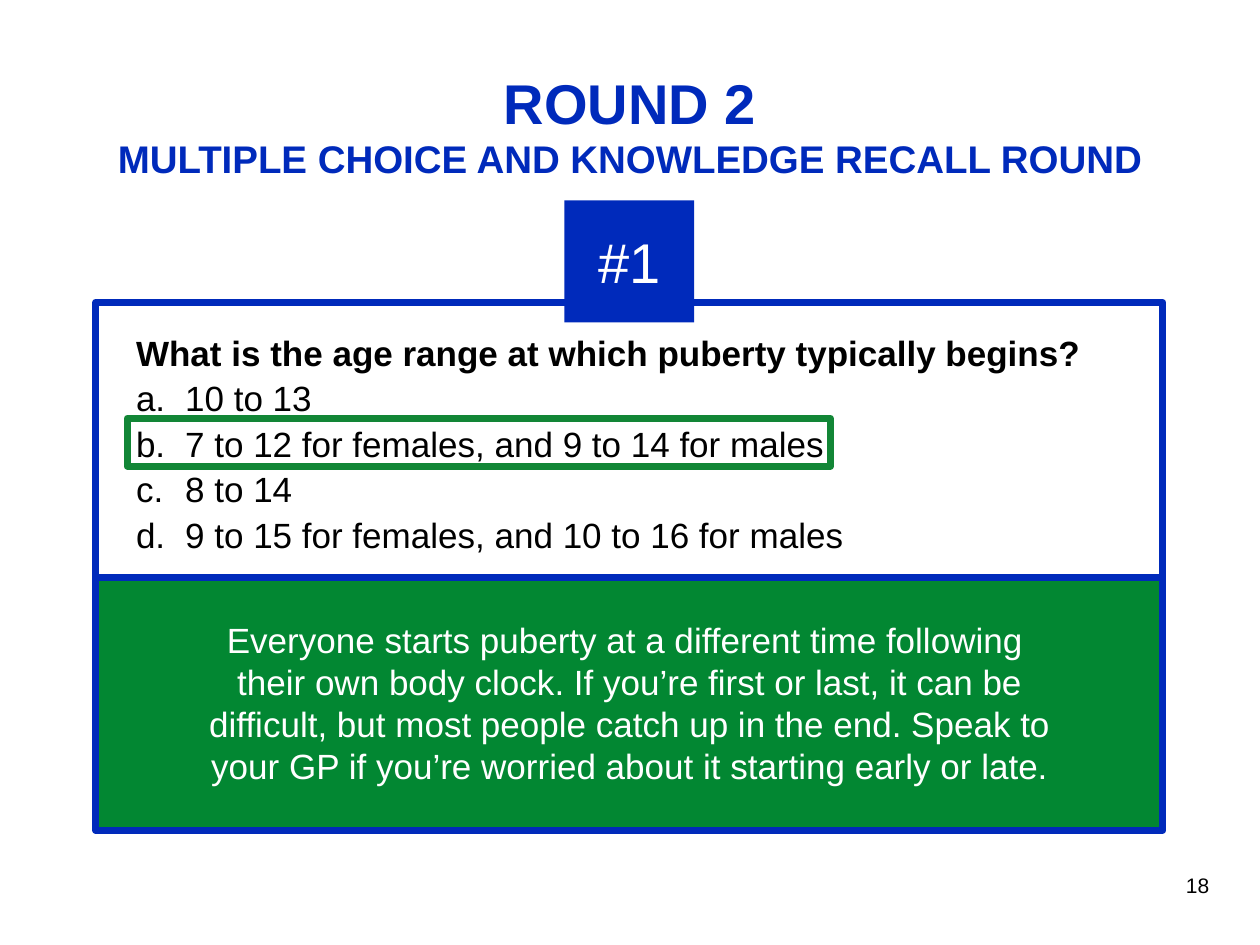
from lxml import etree
from pptx import Presentation
from pptx.dml.color import RGBColor
from pptx.enum import shapes, text
from pptx.oxml import ns
from pptx.util import Inches, Pt

BLUE, GREEN, FRAME = "002ABB", "028732", "128636"
WHITE, BLACK = "FFFFFF", "000000"

TITLE = "ROUND 2\vMULTIPLE CHOICE AND KNOWLEDGE RECALL ROUND"
TITLE_SIZES = [32, 22]
BADGE = "#1"
QUESTION = "What is the age range at which puberty typically begins?"
OPTIONS = [
    "10 to 13",
    "7 to 12 for females, and 9 to 14 for males",
    "8 to 14",
    "9 to 15 for females, and 10 to 16 for males",
]
ANSWER = (
    "Everyone starts puberty at a different time following \v"
    "their own body clock. If you’re first or last, it can be difficult, "
    "but most people catch up in the end. Speak to your GP if you’re "
    "worried about it starting early or late."
)
PAGE = "18"

LEFT, WIDTH = 0.76, 8.47
TOP, SPLIT, BOTTOM = 2.4, 4.58, 6.59


def color(code):
    return RGBColor.from_string(code)


def style(run, size, code, bold=False):
    font = run.font
    font.name, font.size, font.bold = "Arial", Pt(size), bold
    font.color.rgb = color(code)


def set_frame(frame, anchor):
    frame.word_wrap = True
    frame.auto_size = text.MSO_AUTO_SIZE.NONE
    frame.vertical_anchor = anchor
    frame.margin_left = frame.margin_right = Inches(0.05)
    frame.margin_top = frame.margin_bottom = Inches(0.05)


def write(frame, words, size, code, anchor=text.MSO_ANCHOR.MIDDLE):
    """Fill a frame with one centred paragraph."""
    set_frame(frame, anchor)
    frame.text = words
    para = frame.paragraphs[0]
    para.alignment = text.PP_ALIGN.CENTER
    for run in para.runs:
        style(run, size, code)


def add_rect(slide, box, fill=None, line=None):
    rect = slide.shapes.add_shape(
        shapes.MSO_SHAPE.RECTANGLE, *map(Inches, box))
    rect.shadow.inherit = False
    if fill:
        rect.fill.solid()
        rect.fill.fore_color.rgb = color(fill)
    else:
        rect.fill.background()
    if line:
        rect.line.color.rgb = color(line)
        rect.line.width = Pt(4)
    else:
        rect.line.fill.background()
    return rect


def add_text(slide, box):
    return slide.shapes.add_textbox(*map(Inches, box)).text_frame


def add_letter(para):
    """Number a paragraph a., b., c. with a hanging indent."""
    props = para._p.get_or_add_pPr()
    props.set("marL", str(Inches(0.39)))
    props.set("indent", str(-Inches(0.39)))
    etree.SubElement(props, ns.qn("a:buAutoNum"), type="alphaLcPeriod")


def add_title(slide):
    title = slide.shapes.title
    title.left, title.top = Inches(0.5), Inches(0.37)
    title.width, title.height = Inches(9), Inches(1.24)
    write(title.text_frame, TITLE, TITLE_SIZES[0], BLUE)
    para = title.text_frame.paragraphs[0]
    for run, size in zip(para.runs, TITLE_SIZES):
        style(run, size, BLUE, True)
    gap = para._p.find(ns.qn("a:br"))
    etree.SubElement(gap, ns.qn("a:rPr"), sz=str(TITLE_SIZES[0] * 100))


def add_quiz(slide):
    frame = add_text(slide, (1.03, 2.58, WIDTH, 1.9))
    set_frame(frame, text.MSO_ANCHOR.TOP)
    frame.text = "\n".join([QUESTION, *OPTIONS])
    for i, para in enumerate(frame.paragraphs):
        if i:
            add_letter(para)
        para.space_after = Pt(2)
        style(para.runs[0], 20, BLACK, bold=i == 0)


def main():
    deck = Presentation()
    deck.slide_width, deck.slide_height = Inches(10), Inches(7.5)
    slide = deck.slides.add_slide(deck.slide_layouts[5])

    add_rect(slide, (LEFT, TOP, WIDTH, SPLIT - TOP), WHITE, BLUE)
    add_quiz(slide)
    badge = add_rect(slide, (4.48, 1.59, 1.03, 0.97), BLUE)
    write(badge.text_frame, BADGE, 32, WHITE)
    add_title(slide)
    write(add_text(slide, (9.02, 6.75, 0.97, 0.55)), PAGE, 12, BLACK)

    add_rect(slide, (LEFT, SPLIT, WIDTH, BOTTOM - SPLIT), GREEN, BLUE)
    note = add_text(slide, (1.45, 4.86, 7.1, 1.45))
    write(note, ANSWER, 20, WHITE, text.MSO_ANCHOR.TOP)
    add_rect(slide, (1.01, 3.32, 5.58, 0.38), line=FRAME)
    deck.save("out.pptx")


if __name__ == "__main__":
    main()
